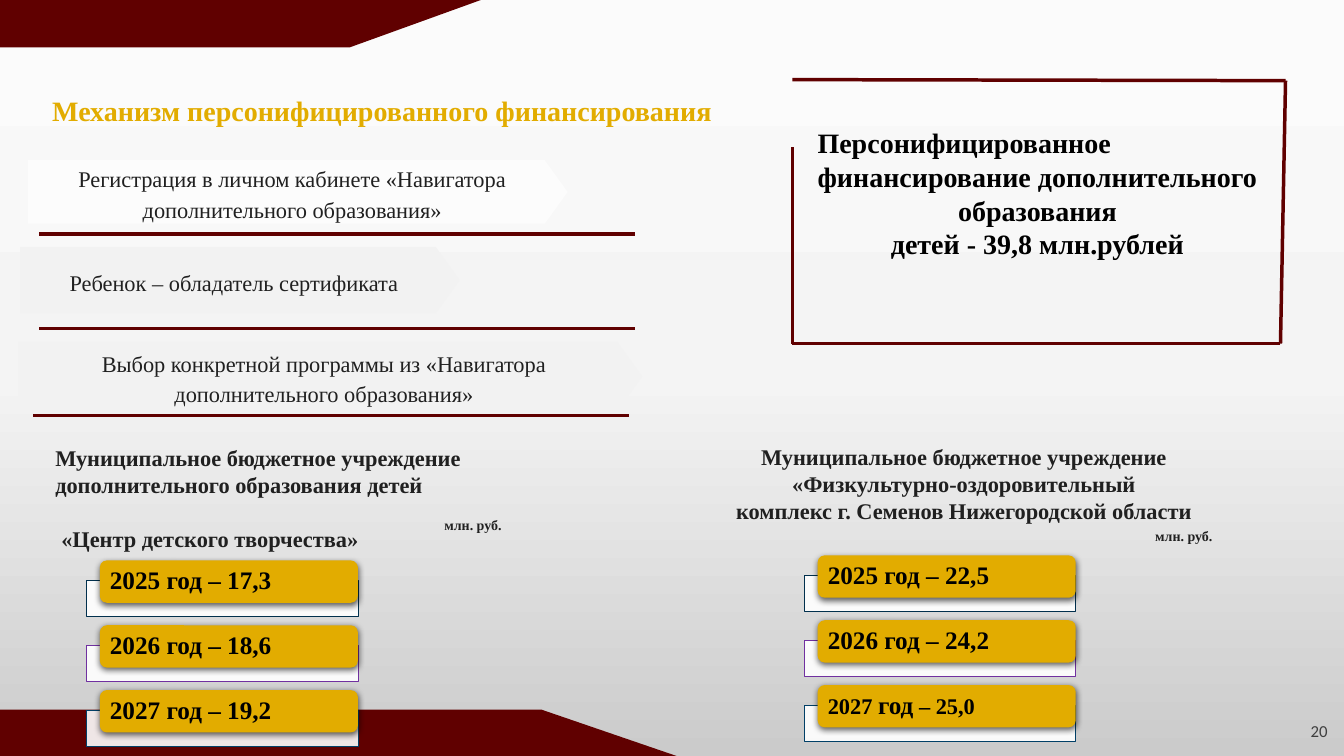
"""Builds the slide on personified financing of children's extra education."""
from copy import deepcopy
from dataclasses import dataclass

from lxml.etree import SubElement
from pptx import Presentation
from pptx.dml.color import RGBColor
from pptx.enum.shapes import MSO_CONNECTOR, MSO_SHAPE
from pptx.enum.text import MSO_ANCHOR, MSO_AUTO_SIZE, PP_ALIGN
from pptx.oxml.ns import qn
from pptx.util import Inches, Pt


@dataclass(frozen=True)
class Theme:
    maroon: RGBColor = RGBColor(0x60, 0x00, 0x00)
    gold: RGBColor = RGBColor(0xE2, 0xAC, 0x00)
    black: RGBColor = RGBColor(0x00, 0x00, 0x00)
    ink: RGBColor = RGBColor(0x20, 0x20, 0x20)
    grey: RGBColor = RGBColor(0x3F, 0x3F, 0x3F)
    white: RGBColor = RGBColor(0xFF, 0xFF, 0xFF)
    pale: RGBColor = RGBColor(0xFC, 0xFC, 0xFC)
    mist: RGBColor = RGBColor(0xF2, 0xF2, 0xF2)
    backdrop: tuple = ("FBFBFB", "F4F4F4", "CBCBCB")
    year_outlines: tuple = ("01304D", "7030A0", "014067")
    serif: str = "Times New Roman"
    sans: str = "Calibri"
    heading: int = 20
    amount: int = 18
    body: int = 16
    number: int = 12
    unit: int = 10


theme = Theme()
deck = Presentation()
deck.slide_width, deck.slide_height = Inches(13.33), Inches(7.5)
CELL = deck.slide_height // 75
slide = deck.slides.add_slide(deck.slide_layouts[5])
shapes = slide.shapes


def cells(*counts):
    """Turns counts of grid cells into lengths."""
    return [round(count * CELL) for count in counts]


def write(paragraph, runs, color, bold=True, align=PP_ALIGN.LEFT, leading=1.0, indent=0, font=theme.serif):
    """Fills a paragraph with (text, size) runs."""
    paragraph.alignment, paragraph.line_spacing = align, leading
    paragraph._p.get_or_add_pPr().set("marL", str(cells(indent)[0]))
    for text, size in runs:
        run = paragraph.add_run()
        run.text = text
        run.font.name, run.font.size, run.font.bold = font, Pt(size), bold
        run.font.color.rgb = color


backdrop = slide.background.fill
backdrop.gradient()
backdrop.gradient_angle = 270
stop_list = next(slide.element.iter(qn("a:gsLst")))
stop_list.append(deepcopy(stop_list[-1]))
for stop, position, shade in zip(backdrop.gradient_stops, (0, 0.5, 1), theme.backdrop):
    stop.position, stop.color.rgb = position, RGBColor.from_string(shade)

ribbons = [
    [(0, 0), (47.7, 0), (34.7, 4.7), (0, 4.7)],
    [(0, 70.4), (53.7, 70.4), (67.1, 75), (0, 75)],
]
for corners in ribbons:
    outline = shapes.build_freeform(*cells(*corners[0]))
    outline.add_line_segments([cells(*corner) for corner in corners[1:]])
    ribbon = outline.convert_to_shape()
    ribbon.shadow.inherit = False
    ribbon.fill.solid()
    ribbon.fill.fore_color.rgb = theme.maroon
    ribbon.line.fill.background()

frame_lines = [(127.5, 8, 78.6, 7.9), (127, 34.1, 78.6, 34.1), (78.6, 14.6, 78.6, 34.1), (127.5, 8, 127, 34.1)]
step_rules = [(left, row, left + 59.1, row) for left, row in ((3.9, 23.2), (3.9, 32.6), (3.3, 41.2))]
for ends in frame_lines + step_rules:
    rule = shapes.add_connector(MSO_CONNECTOR.STRAIGHT, *cells(*ends))
    rule.line.color.rgb, rule.line.width = theme.maroon, Pt(2.5)
    SubElement(rule._element.spPr, qn("a:effectLst"))

title = shapes.title
title.left, title.top, title.width, title.height = cells(0, 7.1, 75.8, 5.5)
title.text_frame.auto_size, title.text_frame.word_wrap = MSO_AUTO_SIZE.NONE, True
title.text_frame.vertical_anchor = MSO_ANCHOR.TOP
write(title.text_frame.paragraphs[0], [("Механизм персонифицированного финансирования", theme.heading)],
      theme.gold, align=PP_ALIGN.CENTER, leading=1.5)

steps = [
    ("Регистрация в личном кабинете «Навигатора дополнительного образования»", (2.8, 15.9, 53.5, 6.3), theme.pale),
    ("Ребенок – обладатель сертификата", (2, 24.5, 43.6, 6.6), theme.mist),
    ("Выбор конкретной программы из «Навигатора дополнительного образования»", (1.8, 33.9, 61.9, 6.9), theme.mist),
]
for step, area, tint in steps:
    arrow = shapes.add_shape(MSO_SHAPE.PENTAGON, *cells(*area))
    arrow.adjustments[0] = 0.36
    arrow.shadow.inherit = False
    arrow.fill.solid()
    arrow.fill.fore_color.rgb = tint
    arrow.line.fill.background()
    arrow.text_frame.vertical_anchor = MSO_ANCHOR.MIDDLE
    write(arrow.text_frame.paragraphs[0], [(step, theme.body)], theme.ink, False, PP_ALIGN.CENTER, 1.15)

left, center = PP_ALIGN.LEFT, PP_ALIGN.CENTER
statements = [
    ((78.7, 12, 48.4, 14.5), theme.heading, theme.black, [
        ("Персонифицированное", left, 1.4, 0),
        ("финансирование дополнительного образования", center, 0, 0),
        ("детей - 39,8 млн.рублей", center, 0, 0)]),
    ((2.3, 43.6, 54.7, 11.8), theme.body, theme.ink, [
        ("Муниципальное бюджетное учреждение дополнительного образования детей", left, 2.2, 0),
        ("«Центр детского творчества»", left, 2.8, 19)]),
    ((66.7, 43.5, 55.6, 9.1), theme.body, theme.ink, [
        ("Муниципальное бюджетное учреждение «Физкультурно-оздоровительный", center, 2.2, 0),
        ("комплекс г. Семенов Нижегородской области", center, 2.2, 0)]),
    ((43.1, 50.8, 8.7, 2.7), theme.unit, theme.ink, [("млн. руб.", left, 0, 0)]),
    ((113.6, 51.8, 8.7, 2.7), theme.unit, theme.ink, [("млн. руб.", left, 0, 0)]),
]
for area, size, color, lines in statements:
    statement = shapes.add_textbox(*cells(*area)).text_frame
    statement.word_wrap = True
    for index, (line, align, indent, gap) in enumerate(lines):
        paragraph = statement.add_paragraph() if index else statement.paragraphs[0]
        write(paragraph, [(line, size)], color, align=align, indent=indent)
        if gap:
            paragraph.space_before = Pt(gap)

budgets = [
    (8.6, 57.6, [[("2025 год – 17,3", theme.amount)],
                 [("2026 год – 18,6", theme.amount)],
                 [("2027 год – 19,2", theme.amount)]]),
    (79.8, 57.1, [[("2025 год – 22,5", theme.amount)],
                  [("2026 год – 24,2", theme.amount)],
                  [("2027 ", theme.body), ("год", theme.amount), (" – 25,0", theme.body)]]),
]
for column, first_row, years in budgets:
    for index, (amount, outline_color) in enumerate(zip(years, theme.year_outlines)):
        row = first_row + 6.43 * index
        tray = shapes.add_shape(MSO_SHAPE.RECTANGLE, *cells(column, row, 26.9, 3.6))
        tray.shadow.inherit = False
        tray.fill.solid()
        tray.fill.fore_color.rgb = theme.white
        SubElement(next(tray._element.spPr.iter(qn("a:srgbClr"))), qn("a:alpha"), val="90000")
        tray.line.color.rgb, tray.line.width = RGBColor.from_string(outline_color), Pt(0.5)

        plate = shapes.add_shape(MSO_SHAPE.ROUNDED_RECTANGLE, *cells(column + 1.3, row - 2, 25.6, 4.2))
        plate.fill.solid()
        plate.fill.fore_color.rgb = theme.gold
        plate.line.fill.background()
        effects = SubElement(plate._element.spPr, qn("a:effectLst"))
        glow = SubElement(effects, qn("a:outerShdw"), blurRad=str(Pt(4.5)), dist=str(Pt(1.5)),
                          dir="5400000", rotWithShape="0")
        shade = SubElement(glow, qn("a:srgbClr"), val=str(theme.black))
        SubElement(shade, qn("a:alpha"), val="63000")
        label = plate.text_frame
        label.vertical_anchor = MSO_ANCHOR.MIDDLE
        label.margin_left, label.margin_top, label.margin_right, label.margin_bottom = cells(0.8, 0, 0.8, 0)
        write(label.paragraphs[0], amount, theme.black, leading=0.9)

page = shapes.add_textbox(*cells(129, 71.2, 3.9, 3.6)).text_frame
write(page.paragraphs[0], [("20", theme.number)], theme.grey, False, leading=0.9, font=theme.sans)

deck.save("out.pptx")
